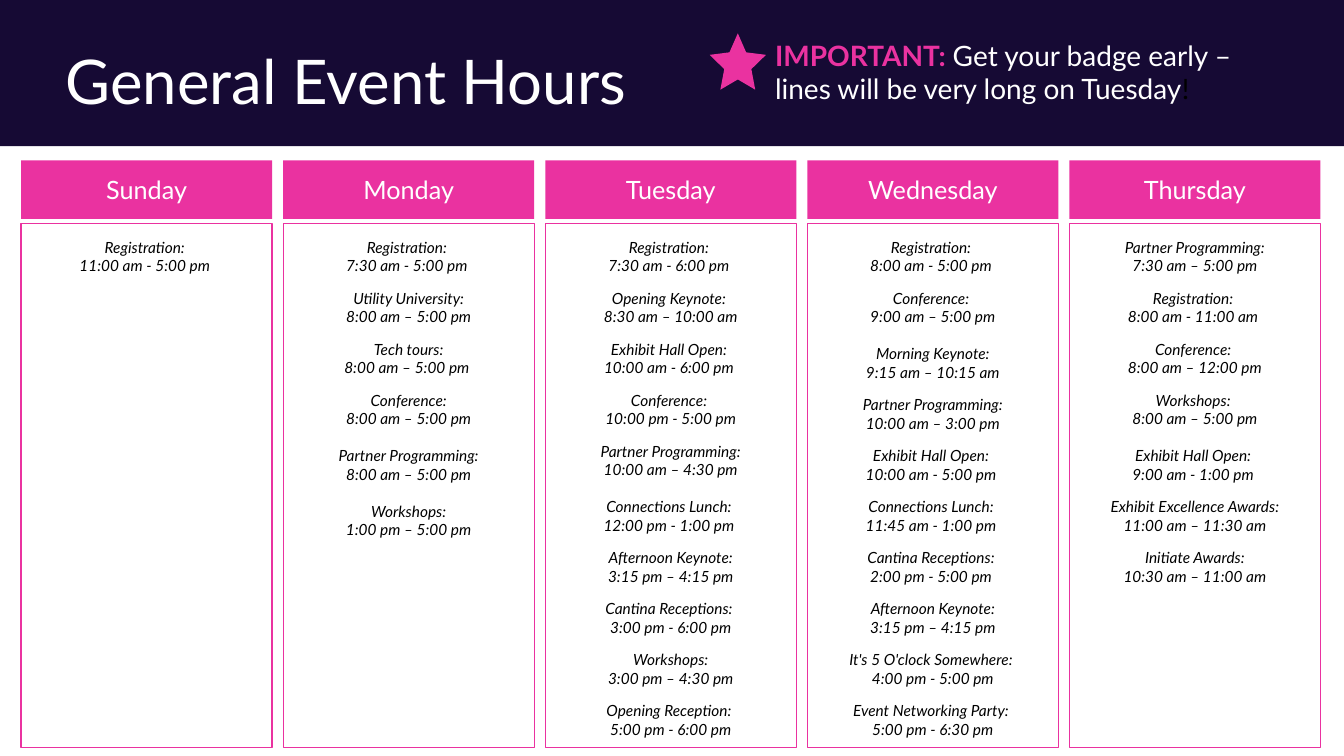
from copy import deepcopy
from dataclasses import dataclass

from pptx import Presentation
from pptx.dml.color import RGBColor
from pptx.enum import shapes, text
from pptx.util import Pt


@dataclass(frozen=True)
class Theme:
    navy: str = "160A34"
    pink: str = "EA32A0"
    white: str = "FFFFFF"
    black: str = "000000"
    font: str = "Lato"
    title: int = 44
    notice: int = 20
    heading: int = 18
    body: int = 11
    gap: float = 10
    wide_gap: float = 13.2
    line_height: float = 13.2


# Schedule: each entry is an event and its hours
SCHEDULE = {
    "Sunday": [("Registration: ", "11:00 am - 5:00 pm ")],
    "Monday": [
        ("Registration: ", "7:30 am - 5:00 pm "),
        ("Utility University:", "8:00 am – 5:00 pm"),
        ("Tech tours:", "8:00 am – 5:00 pm "),
        ("Conference:", "8:00 am – 5:00 pm"),
        ("Partner Programming:", "8:00 am – 5:00 pm"),
        ("Workshops:", "1:00 pm – 5:00 pm"),
    ],
    "Tuesday": [
        ("Registration: ", "7:30 am - 6:00 pm "),
        ("Opening Keynote: ", "8:30 am – 10:00 am"),
        ("Exhibit Hall Open: ", "10:00 am - 6:00 pm "),
        ("Conference: ", "10:00 pm - 5:00 pm"),
        ("Partner Programming:", "10:00 am – 4:30 pm"),
        ("Connections Lunch: ", "12:00 pm - 1:00 pm "),
        ("Afternoon Keynote:", "3:15 pm – 4:15 pm"),
        ("Cantina Receptions: ", "3:00 pm - 6:00 pm"),
        ("Workshops:", "3:00 pm – 4:30 pm"),
        ("Opening Reception: ", "5:00 pm - 6:00 pm"),
    ],
    "Wednesday": [
        ("Registration: ", "8:00 am - 5:00 pm "),
        ("Conference: ", "9:00 am – 5:00 pm"),
        ("Morning Keynote:", "9:15 am – 10:15 am"),
        ("Partner Programming:", "10:00 am – 3:00 pm"),
        ("Exhibit Hall Open: ", "10:00 am - 5:00 pm "),
        ("Connections Lunch: ", "11:45 am - 1:00 pm "),
        ("Cantina Receptions: ", "2:00 pm - 5:00 pm "),
        ("Afternoon Keynote:", "3:15 pm – 4:15 pm"),
        ("It's 5 O'clock Somewhere: ", "4:00 pm - 5:00 pm"),
        ("Event Networking Party: ", "5:00 pm - 6:30 pm"),
    ],
    "Thursday": [
        ("Partner Programming:", "7:30 am – 5:00 pm"),
        ("Registration: ", "8:00 am - 11:00 am "),
        ("Conference: ", "8:00 am – 12:00 pm"),
        ("Workshops: ", "8:00 am – 5:00 pm"),
        ("Exhibit Hall Open: ", "9:00 am - 1:00 pm "),
        ("Exhibit Excellence Awards:", "11:00 am – 11:30 am"),
        ("Initiate Awards:", "10:30 am – 11:00 am"),
    ],
}
# Entries followed by a wider gap
WIDE_AFTER = {("Monday", 3), ("Monday", 4), ("Tuesday", 4),
              ("Wednesday", 1), ("Thursday", 3)}


def add_span(para, words, *, font, size, color, bold=False, italic=False):
    span = para.add_run()
    span.text = words
    span.font.name = font
    span.font.size = Pt(size)
    span.font.color.rgb = RGBColor.from_string(color)
    span.font.bold = bold
    span.font.italic = italic
    return span


class SlideBuilder:
    def __init__(self, page, theme):
        self.page = page
        self.theme = theme

    def span(self, para, words, size, color, **style):
        return add_span(para, words, font=self.theme.font, size=size, color=color, **style)

    def shape(self, kind, place, fill=None, line=None):
        shape = self.page.shapes.add_shape(kind, *map(Pt, place))
        shape.shadow.inherit = False
        if fill:
            shape.fill.solid()
            shape.fill.fore_color.rgb = RGBColor.from_string(fill)
        else:
            shape.fill.background()
        if line:
            shape.line.color.rgb = RGBColor.from_string(line)
            shape.line.width = Pt(1)
        else:
            shape.line.fill.background()
        return shape

    def rectangle(self, place, **style):
        return self.shape(shapes.MSO_SHAPE.RECTANGLE, place, **style)

    def text_box(self, place):
        box = self.page.shapes.add_textbox(*map(Pt, place))
        box.text_frame.word_wrap = True
        box.text_frame.auto_size = text.MSO_AUTO_SIZE.SHAPE_TO_FIT_TEXT
        return box.text_frame

    def title(self, words, place):
        title = self.page.shapes.title
        title.left, title.top, title.width, title.height = map(Pt, place)
        frame = title.text_frame
        frame.auto_size = text.MSO_AUTO_SIZE.NONE
        frame.vertical_anchor = text.MSO_ANCHOR.MIDDLE
        para = frame.paragraphs[0]
        para.alignment = text.PP_ALIGN.LEFT
        para.line_spacing = 0.9
        self.span(para, words, self.theme.title, self.theme.white)

    def band(self, place):
        band = self.rectangle(place, fill=self.theme.navy)
        # Send behind the title
        self.page.shapes._spTree.insert(2, band._element)

    def heading(self, words, place):
        frame = self.rectangle(place, fill=self.theme.pink).text_frame
        frame.vertical_anchor = text.MSO_ANCHOR.MIDDLE
        para = frame.paragraphs[0]
        para.alignment = text.PP_ALIGN.CENTER
        self.span(para, words, self.theme.heading, self.theme.white)

    def events(self, day, entries, left, top, width):
        theme = self.theme
        gaps = [theme.wide_gap if (day, index) in WIDE_AFTER else theme.gap
                for index in range(len(entries))]
        height = 7.2 + len(entries) * 2 * theme.line_height + sum(gaps[:-1])
        frame = self.text_box((left, top, width, height))
        for index, (event, hours) in enumerate(entries):
            para = frame.add_paragraph() if index else frame.paragraphs[0]
            para.alignment = text.PP_ALIGN.CENTER
            para.space_after = Pt(gaps[index])
            span = self.span(para, event, theme.body, theme.black, italic=True)
            para.add_line_break()
            # The break takes the size of the text around it
            para._p[-1].append(deepcopy(span.font._element))
            self.span(para, hours, theme.body, theme.black, italic=True)

    def notice(self, place, spans):
        para = self.text_box(place).paragraphs[0]
        for words, color, bold in spans:
            self.span(para, words, self.theme.notice, color, bold=bold)


def main():
    deck = Presentation()
    deck.slide_width, deck.slide_height = Pt(960), Pt(540)
    theme = Theme()
    slide = SlideBuilder(deck.slides.add_slide(deck.slide_layouts[5]), theme)

    # Top band with title and notice
    slide.band((0, 0, 960, 104.4))
    slide.title("General Event Hours", (39.6, 24.5, 828, 71.3))
    slide.shape(shapes.MSO_SHAPE.STAR_5_POINT, (506.9, 23.8, 40.3, 40.3),
                fill=theme.pink).adjustments[0] = 0.24
    slide.notice((546.5, 23.8, 373.7, 55.4), [
        ("IMPORTANT: ", theme.pink, True),
        ("Get your badge early – lines will be very long on Tuesday", theme.white, False),
        ("!", theme.black, False),
    ])

    # One column per day
    left, pitch, width = 15.1, 187.2, 179.3
    for column, (day, entries) in enumerate(SCHEDULE.items()):
        x = left + column * pitch
        slide.heading(day, (x, 114.5, width, 41.8))
        slide.events(day, entries, x, 166.3, width)
        slide.rectangle((x, 159.8, width, 374.4), line=theme.pink)

    deck.save("out.pptx")


if __name__ == "__main__":
    main()
